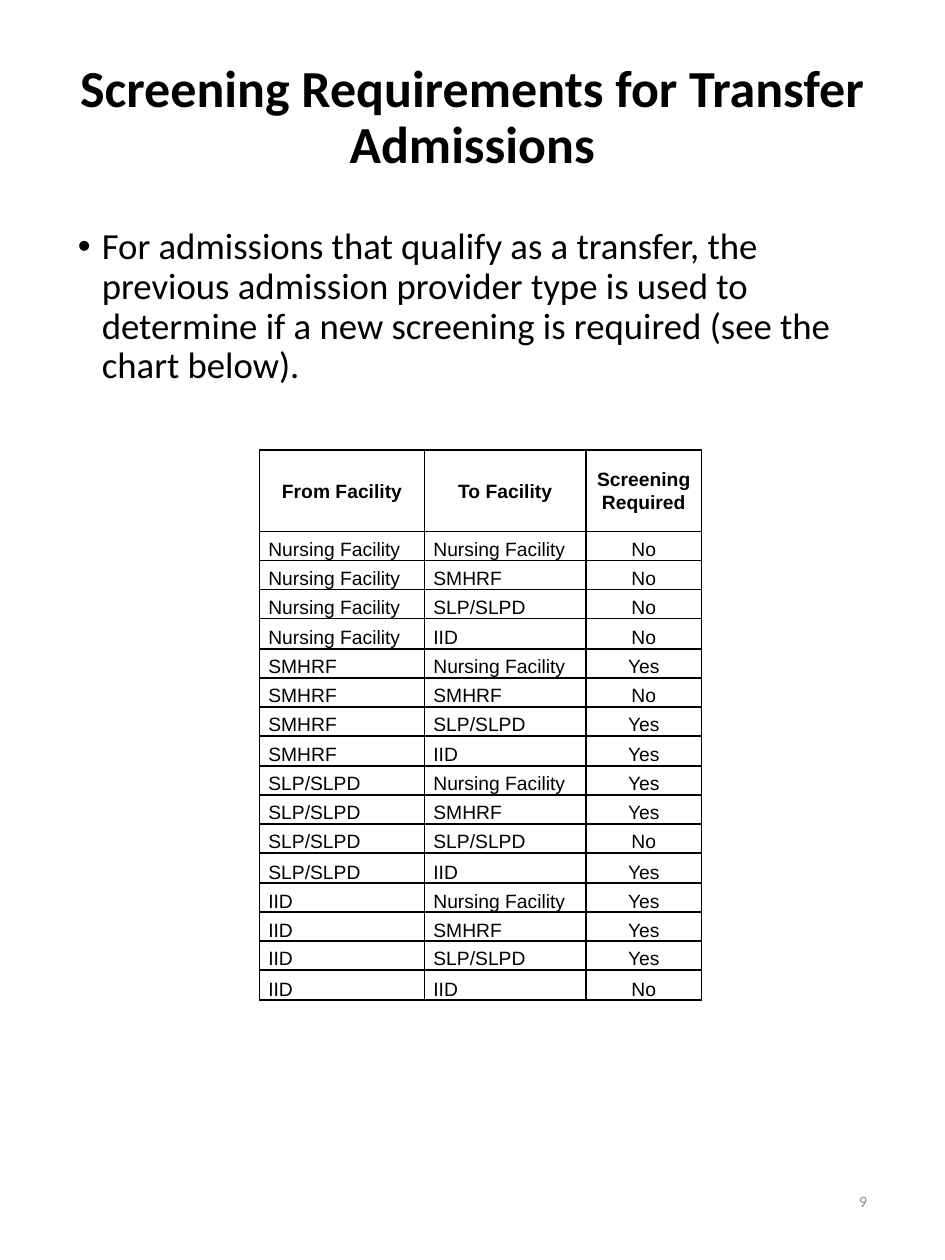
from itertools import product

from lxml.etree import SubElement
from pptx import Presentation
from pptx.dml.color import RGBColor
from pptx.enum.text import MSO_ANCHOR, PP_ALIGN
from pptx.oxml.ns import qn
from pptx.util import Inches, Pt

BLACK = RGBColor(0x00, 0x00, 0x00)
GREY = RGBColor(0x8C, 0x8C, 0x8C)

WIDTH, HEIGHT = Inches(7.5), Inches(10)
MARGIN = Inches(0.52)
CONTENT_WIDTH = WIDTH - 2 * MARGIN
NUMBER_WIDTH = Inches(1.69)

FACILITIES = ["Nursing Facility", "SMHRF", "SLP/SLPD", "IID"]
HEADINGS = ["From Facility", "To Facility", "Screening Required"]
COLUMN_WIDTHS = [1.31, 1.28, 0.92]
HEADER_HEIGHT, ROW_HEIGHT, LAST_ROW_HEIGHT = 0.65, 0.23, 0.24
BORDER_WIDTH = Pt(1)


def write(paragraph, wording, size, font="Calibri", color=BLACK, bold=False):
    """Add one formatted run to a paragraph."""
    run = paragraph.add_run()
    run.text = wording
    run.font.size = Pt(size)
    run.font.name = font
    run.font.bold = bold
    run.font.color.rgb = color


def add_text(slide, box, wording, size, align, anchor, spacing=1.0, **style):
    """Place a wrapped text box and return its paragraph."""
    frame = slide.shapes.add_textbox(*box).text_frame
    frame.word_wrap = True
    frame.vertical_anchor = anchor
    paragraph = frame.paragraphs[0]
    paragraph.alignment = align
    paragraph.line_spacing = spacing
    write(paragraph, wording, size, **style)
    return paragraph


def add_title(slide, box):
    """Place the centred heading."""
    add_text(slide, box, "Screening Requirements for Transfer Admissions", 29.7,
             PP_ALIGN.CENTER, MSO_ANCHOR.MIDDLE, 0.9, bold=True)


def add_explanation(slide, box):
    """Place the bulleted explanation."""
    bullet = add_text(
        slide, box,
        "For admissions that qualify as a transfer, the previous admission "
        "provider type is used to determine if a new screening is required "
        "(see the chart below).",
        21, PP_ALIGN.LEFT, MSO_ANCHOR.TOP, 0.9)
    bullet.space_before = Pt(7.5)
    properties = bullet._p.get_or_add_pPr()
    indent = Inches(0.19)
    properties.set("marL", str(indent))
    properties.set("indent", str(-indent))
    SubElement(properties, qn("a:buFont"), typeface="Arial")
    SubElement(properties, qn("a:buChar"), char="•")


def add_page_number(slide, box):
    """Place the page number."""
    add_text(slide, box, "9", 9, PP_ALIGN.RIGHT, MSO_ANCHOR.MIDDLE, color=GREY)


def set_borders(cell):
    """Draw a thin black line on each side of a cell."""
    properties = cell._tc.get_or_add_tcPr()
    for position, side in enumerate(("a:lnL", "a:lnR", "a:lnT", "a:lnB")):
        line = SubElement(properties, qn(side), w=str(BORDER_WIDTH))
        fill = SubElement(line, qn("a:solidFill"))
        SubElement(fill, qn("a:srgbClr"), val=str(BLACK))
        properties.insert(position, line)


def fill_cell(cell, wording, align, anchor, bold):
    """Write and format one table cell."""
    cell.fill.background()
    cell.margin_left = cell.margin_right = Inches(0.07)
    cell.margin_top = cell.margin_bottom = 0
    cell.vertical_anchor = anchor
    paragraph = cell.text_frame.paragraphs[0]
    paragraph.alignment = align
    paragraph.line_spacing = 1.07
    write(paragraph, wording, 11, font="Arial", bold=bold)
    set_borders(cell)


def screening_required(origin, destination):
    """Tell whether a transfer needs a new screening."""
    exempt = origin == FACILITIES[0] or origin == destination
    return "No" if exempt else "Yes"


def add_screening_table(slide, box):
    """Place the table of every transfer between facilities."""
    transfers = [(origin, destination, screening_required(origin, destination))
                 for origin, destination in product(FACILITIES, repeat=2)]
    rows = [HEADINGS, *transfers]
    table = slide.shapes.add_table(len(rows), len(HEADINGS), *box).table
    table.first_row = table.horz_banding = False
    for column, width in zip(table.columns, COLUMN_WIDTHS):
        column.width = Inches(width)
    for r, entries in enumerate(rows):
        header = r == 0
        height = LAST_ROW_HEIGHT if entries[1] == FACILITIES[-1] else ROW_HEIGHT
        table.rows[r].height = Inches(HEADER_HEIGHT if header else height)
        anchor = MSO_ANCHOR.MIDDLE if header else MSO_ANCHOR.BOTTOM
        for c, wording in enumerate(entries):
            centred = header or c == len(HEADINGS) - 1
            align = PP_ALIGN.CENTER if centred else PP_ALIGN.LEFT
            fill_cell(table.cell(r, c), wording, align, anchor, header)


def main():
    """Build and save the slide."""
    presentation = Presentation()
    presentation.slide_width, presentation.slide_height = WIDTH, HEIGHT
    slide = presentation.slides.add_slide(presentation.slide_layouts[6])
    add_title(slide, (MARGIN, Inches(0.53), CONTENT_WIDTH, Inches(0.82)))
    add_explanation(slide, (MARGIN, Inches(1.76), CONTENT_WIDTH, Inches(7.24)))
    add_page_number(slide, (WIDTH - MARGIN - NUMBER_WIDTH, Inches(9.27),
                            NUMBER_WIDTH, Inches(0.53)))
    add_screening_table(slide, (Inches(2.06), Inches(3.57),
                                Inches(sum(COLUMN_WIDTHS)), Inches(4.41)))
    presentation.save("out.pptx")


if __name__ == "__main__":
    main()
